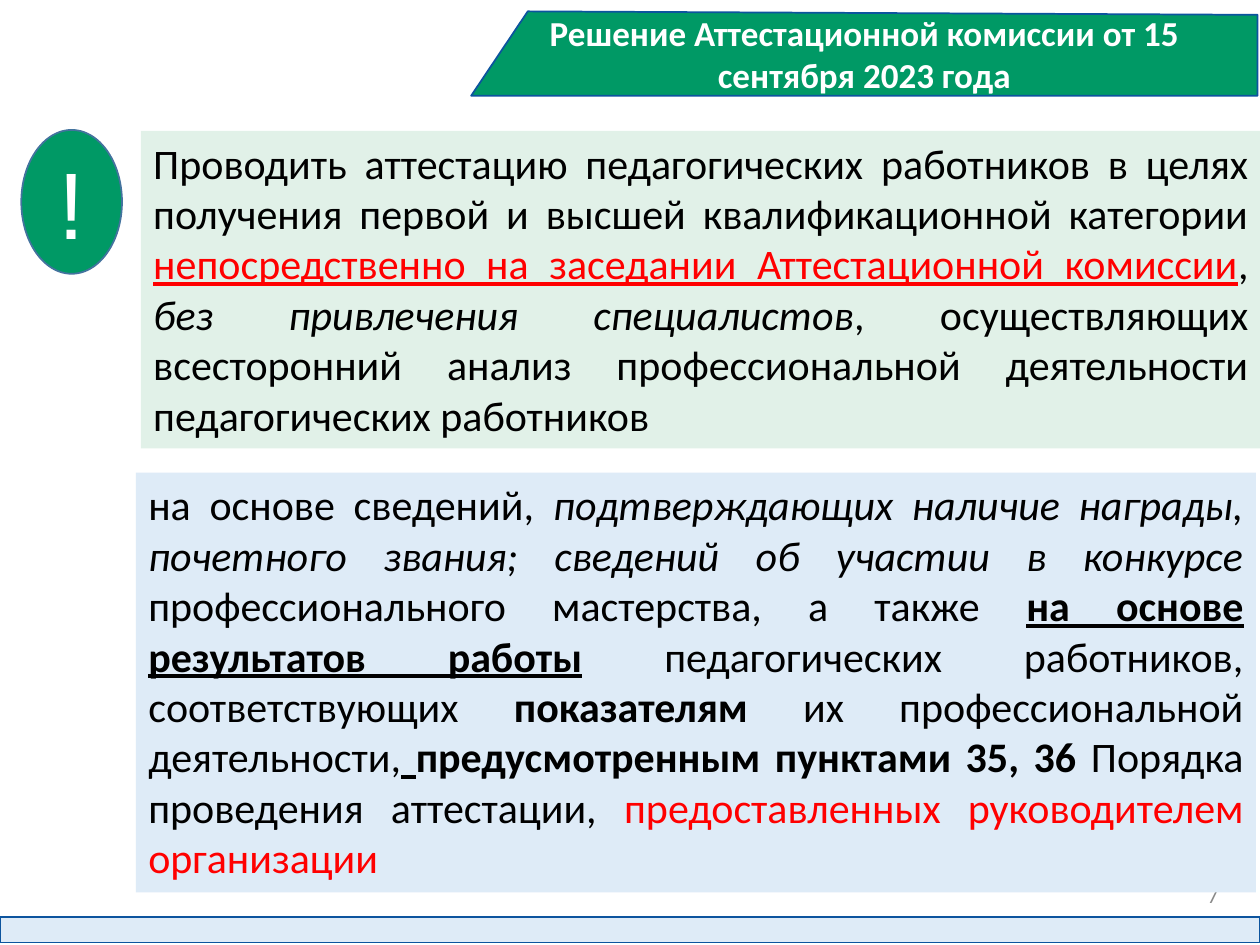
from dataclasses import dataclass

from pptx import Presentation
from pptx import util as u
from pptx.dml.color import RGBColor
from pptx.enum import shapes, text


@dataclass(frozen=True)
class Theme:
    green: str = "009965"
    pale_green: str = "E1F1E8"
    pale_blue: str = "DEEBF7"
    blue_line: str = "0C549E"
    badge_line: str = "43739E"
    white: str = "FFFFFF"
    black: str = "000000"
    red: str = "FF0000"
    grey: str = "898989"
    font: str = "Calibri"
    badge_font: str = "Arial"
    title_size: int = 20
    body_size: int = 24
    badge_size: int = 54
    number_size: int = 12


theme = Theme()


def paint(shape, fill, line=None):
    shape.shadow.inherit = False
    shape.fill.solid()
    shape.fill.fore_color.rgb = RGBColor.from_string(fill)
    if line:
        shape.line.color.rgb = RGBColor.from_string(line)
        shape.line.width = u.Pt(1)
    else:
        shape.line.fill.background()


def write(shape, runs, size, color, alignment, anchor, font=theme.font, bold=False):
    """Fill one paragraph with (wording, style) runs; style letters: b, i, u, r for red."""
    frame = shape.text_frame
    frame.word_wrap = True
    frame.auto_size = text.MSO_AUTO_SIZE.NONE
    frame.vertical_anchor = anchor
    paragraph = frame.paragraphs[0]
    paragraph.alignment = alignment
    paragraph.font.name = font
    paragraph.font.size = u.Pt(size)
    paragraph.font.bold = bold
    paragraph.font.color.rgb = RGBColor.from_string(color)
    for wording, style in runs:
        run = paragraph.add_run()
        run.text = wording
        # Runs carry the paragraph's look explicitly, then their own emphasis
        run.font.name = font
        run.font.size = u.Pt(size)
        run.font.bold = bold or "b" in style
        run.font.italic = "i" in style
        run.font.underline = "u" in style
        run.font.color.rgb = RGBColor.from_string(theme.red if "r" in style else color)


presentation = Presentation()
presentation.slide_width, presentation.slide_height = u.Cm(25.4), u.Cm(19.05)
slide = presentation.slides.add_slide(presentation.slide_layouts[5])

# Title on a slanted banner
corners = [(10.64, 0.23), (25.35, 0.3), (25.35, 1.93), (9.5, 1.93)]
points = [(u.Cm(x), u.Cm(y)) for x, y in corners]
builder = slide.shapes.build_freeform(*points[0])
builder.add_line_segments(points[1:], close=True)
banner = builder.convert_to_shape()
paint(banner, theme.green, theme.blue_line)

title = slide.shapes.title
title.left, title.top, title.width, title.height = u.Cm(9.5), u.Cm(0.23), u.Cm(15.85), u.Cm(1.7)
title.text_frame.margin_top = title.text_frame.margin_bottom = 0
write(title, [("Решение Аттестационной комиссии от 15 сентября 2023 года", "")],
      theme.title_size, theme.white, text.PP_ALIGN.CENTER, text.MSO_ANCHOR.MIDDLE, bold=True)
banner.element.addnext(title.element)

# Footer bar and page number
footer = slide.shapes.add_shape(shapes.MSO_SHAPE.FLOWCHART_PROCESS,
                                0, u.Cm(18.49), u.Cm(25.4), u.Cm(0.51))
paint(footer, theme.pale_blue, theme.blue_line)
number = slide.shapes.add_textbox(u.Cm(19.1), u.Cm(17.53), u.Cm(5.71), u.Cm(1.02))
write(number, [("7", "")], theme.number_size, theme.grey,
      text.PP_ALIGN.RIGHT, text.MSO_ANCHOR.MIDDLE)

# Exclamation badge
badge = slide.shapes.add_shape(shapes.MSO_SHAPE.OVAL,
                               u.Cm(0.43), u.Cm(2.62), u.Cm(2.03), u.Cm(2.9))
paint(badge, theme.green, theme.badge_line)
write(badge, [("!", "")], theme.badge_size, theme.white,
      text.PP_ALIGN.CENTER, text.MSO_ANCHOR.MIDDLE, font=theme.badge_font)

# Decision panels: left, top, height, fill, runs
decision = [
    ("Проводить аттестацию педагогических работников в целях получения первой "
     "и высшей квалификационной категории ", ""),
    ("непосредственно на заседании Аттестационной комиссии", "ur"),
    (", ", ""),
    ("без привлечения специалистов", "i"),
    (", осуществляющих всесторонний анализ профессиональной деятельности "
     "педагогических работников", ""),
]
grounds = [
    ("на основе сведений, ", ""),
    ("подтверждающих наличие награды, почетного звания; "
     "сведений об участии в конкурсе ", "i"),
    ("профессионального мастерства, а также ", ""),
    ("на основе результатов работы", "bu"),
    (" педагогических работников, соответствующих ", ""),
    ("показателям", "b"),
    (" их профессиональной деятельности,", ""),
    (" ", "bu"),
    ("предусмотренным пунктами 35, 36 ", "b"),
    ("Порядка проведения аттестации, ", ""),
    ("предоставленных руководителем организации", "r"),
]
panels = [
    (2.84, 2.64, 6.4, theme.pale_green, decision),
    (2.74, 9.53, 8.46, theme.pale_blue, grounds),
]
for left, top, height, fill, runs in panels:
    panel = slide.shapes.add_shape(shapes.MSO_SHAPE.RECTANGLE,
                                   u.Cm(left), u.Cm(top), u.Cm(22.58), u.Cm(height))
    paint(panel, fill)
    write(panel, runs, theme.body_size, theme.black,
          text.PP_ALIGN.JUSTIFY, text.MSO_ANCHOR.TOP)

presentation.save("out.pptx")
